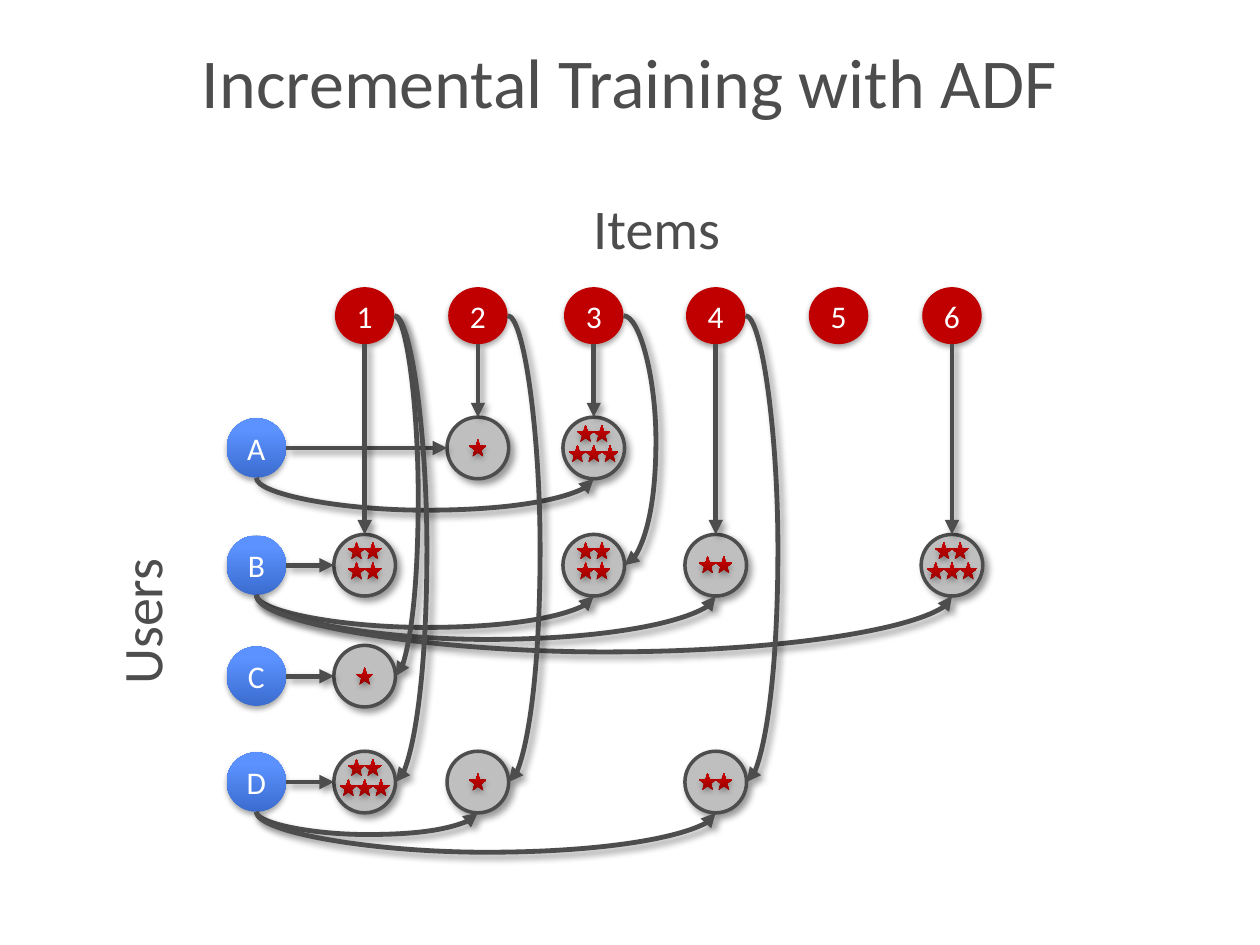
from copy import deepcopy

from lxml import etree
from pptx import Presentation
from pptx.dml.color import RGBColor
from pptx.enum.shapes import MSO_CONNECTOR, MSO_SHAPE
from pptx.enum.text import MSO_ANCHOR, MSO_AUTO_SIZE, PP_ALIGN
from pptx.oxml.ns import qn
from pptx.util import Pt

OVAL, STAR = MSO_SHAPE.OVAL, MSO_SHAPE.STAR_5_POINT
STRAIGHT, CURVE = MSO_CONNECTOR.STRAIGHT, MSO_CONNECTOR.CURVE
CENTER, MIDDLE = PP_ALIGN.CENTER, MSO_ANCHOR.MIDDLE

TITLE = "Incremental Training with ADF"
# label: (text, left, top, width, height, rotation)
AXES = [("Users", 36.7, 331.9, 87.1, 46, 270), ("Items", 331.9, 107.3, 87.8, 46, 0)]
# label: centre across for items, centre down for users
ITEMS = {"1": 208.4, "2": 273.1, "3": 339.3, "4": 409, "5": 479.2, "6": 544}
USERS = {"A": 256, "B": 323, "C": 386.4, "D": 446.9}
# user, item, stars, bulge of the user's arrow, bulge of the item's arrow (0 is straight)
RATINGS = [
    ("A", "2", 1, 0, 0),
    ("A", "3", 5, 18.7, 0),
    ("B", "1", 4, 0, 0),
    ("B", "3", 4, 18.7, 18.7),
    ("B", "4", 2, 25.6, 0),
    ("B", "6", 5, 32.8, 0),
    ("C", "1", 1, 0, 13.7),
    ("D", "1", 5, 0, 18.7),
    ("D", "2", 1, 13.1, 18.7),
    ("D", "4", 2, 23.3, 18.7),
]
# stars in each row and the rows' offsets from the cell's centre
STAR_ROWS = {
    1: [(1, 0)],
    2: [(2, -0.3)],
    4: [(2, -8.3), (2, 3.2)],
    5: [(2, -8.3), (3, 3.2)],
}

FONT = "Calibri"
GRAY, WHITE, RED, SILVER = "4D4D4D", "FFFFFF", "C00000", "BFBFBF"
BLUE_STOPS = [(0, "3B6CCF"), (0.8, "5B92FF"), (1, "5D93FF")]
STAR_STOPS = [(0, "980000"), (0.8, "C60000"), (1, "C70000")]
# opacity %, blur, distance, direction in degrees
SOFT, SLANTED = (35, 3.15, 1.8, 90), (40, 4, 3, 45)

ITEM_Y, USER_X = 180.4, 146.5
NODE, ITEM_HEIGHT, CELL = 34, 32.6, 35.2
STAR_SIZE, STAR_PITCH = 10, 9.3
STEP = (CELL - NODE) / 2


def rgb(color):
    return RGBColor.from_string(color)


def add_shadow(shape, opacity, blur, distance, direction):
    sp_pr = shape._element.spPr
    for old in sp_pr.findall(qn("a:effectLst")):
        sp_pr.remove(old)
    effects = etree.SubElement(sp_pr, qn("a:effectLst"))
    outer = etree.SubElement(
        effects, qn("a:outerShdw"), blurRad=str(Pt(blur)), dist=str(Pt(distance)),
        dir=str(direction * 60000), rotWithShape="0")
    black = etree.SubElement(outer, qn("a:srgbClr"), val="000000")
    etree.SubElement(black, qn("a:alpha"), val=str(opacity * 1000))


def set_fill(shape, paint):
    """Fill with one colour, or with three gradient stops running upwards."""
    fill = shape.fill
    if isinstance(paint, str):
        fill.solid()
        fill.fore_color.rgb = rgb(paint)
        return
    fill.gradient()
    fill.gradient_angle = 90
    stop_list = shape._element.spPr.find(".//" + qn("a:gsLst"))
    stop_list.append(deepcopy(stop_list[0]))
    for stop, (position, color) in zip(fill.gradient_stops, paint):
        stop.position = position
        stop.color.rgb = rgb(color)


def add_centred(shapes, kind, x, y, width, height, paint, shadow):
    shape = shapes.add_shape(
        kind, Pt(x - width / 2), Pt(y - height / 2), Pt(width), Pt(height))
    shape.shadow.inherit = False
    set_fill(shape, paint)
    shape.line.fill.background()
    add_shadow(shape, *shadow)
    return shape


def write(paragraph, text, size, color):
    run = paragraph.add_run()
    run.text = text
    run.font.name, run.font.size = FONT, Pt(size)
    run.font.color.rgb = rgb(color)


def add_node(shapes, label, x, y, height, paint):
    frame = add_centred(shapes, OVAL, x, y, NODE, height, paint, SOFT).text_frame
    frame.margin_left = frame.margin_right = frame.margin_top = frame.margin_bottom = 0
    frame.word_wrap = False
    frame.vertical_anchor = MIDDLE
    frame.paragraphs[0].alignment = CENTER
    write(frame.paragraphs[0], label, 18, WHITE)


def add_cell(shapes, x, y, stars):
    members = shapes.add_group_shape().shapes
    circle = add_centred(members, OVAL, x, y, CELL, CELL, SILVER, SLANTED)
    circle.line.color.rgb = rgb(GRAY)
    circle.line.width = Pt(2)
    for count, offset in STAR_ROWS[stars]:
        for i in range(count):
            star_x = x + (i - (count - 1) / 2) * STAR_PITCH
            add_centred(members, STAR, star_x, y + offset, STAR_SIZE, STAR_SIZE,
                        STAR_STOPS, SOFT)


def add_arrow(shapes, kind, x1, y1, x2, y2):
    arrow = shapes.add_connector(kind, Pt(x1), Pt(y1), Pt(x2), Pt(y2))
    arrow.line.color.rgb = rgb(GRAY)
    arrow.line.width = Pt(2.75)
    etree.SubElement(arrow.line._get_or_add_ln(), qn("a:tailEnd"), type="triangle")
    add_shadow(arrow, *SLANTED)
    return arrow


def add_bow(shapes, x, y, span, bulge):
    """Curve bulging right, from (x, y) down over the span."""
    bow = add_arrow(shapes, CURVE, x, y, x + STEP, y + span)
    guides = bow._element.spPr.find(qn("a:prstGeom")).get_or_add_avLst()
    etree.SubElement(guides, qn("a:gd"), name="adj1",
                     fmla=f"val {round(bulge / STEP * 100000)}")
    return bow


def add_hanging_bow(shapes, x, y, span, bulge):
    """Curve bulging down, from (x, y) rightwards over the span."""
    left = x + span / 2 - STEP / 2
    top = y + STEP / 2 - span / 2
    frame = add_bow(shapes, left, top, span, bulge)._element.spPr.find(qn("a:xfrm"))
    frame.set("rot", str(270 * 60000))
    frame.set("flipH", "1")


def main():
    deck = Presentation()
    deck.slide_width, deck.slide_height = Pt(720), Pt(540)
    slide = deck.slides.add_slide(deck.slide_layouts[5])
    shapes = slide.shapes

    title = shapes.title
    title.left, title.top, title.width, title.height = Pt(41.8), Pt(26), Pt(635.8), Pt(40.3)
    title.text_frame.vertical_anchor = MIDDLE
    title.text_frame.paragraphs[0].alignment = CENTER
    write(title.text_frame.paragraphs[0], TITLE, 40, GRAY)

    for item, x in ITEMS.items():
        add_node(shapes, item, x, ITEM_Y, ITEM_HEIGHT, RED)
    for user, y in USERS.items():
        add_node(shapes, user, USER_X, y, NODE, BLUE_STOPS)

    for text, left, top, width, height, rotation in AXES:
        box = shapes.add_textbox(Pt(left), Pt(top), Pt(width), Pt(height))
        box.rotation = rotation
        box.text_frame.word_wrap = False
        box.text_frame.auto_size = MSO_AUTO_SIZE.SHAPE_TO_FIT_TEXT
        write(box.text_frame.paragraphs[0], text, 32, GRAY)

    for user, item, stars, _, _ in RATINGS:
        add_cell(shapes, ITEMS[item], USERS[user], stars)

    for user, item, _, user_bulge, item_bulge in RATINGS:
        x, y = ITEMS[item], USERS[user]
        if user_bulge:
            add_hanging_bow(shapes, USER_X, y + NODE / 2, x - USER_X, user_bulge)
        else:
            add_arrow(shapes, STRAIGHT, USER_X + NODE / 2, y, x - CELL / 2, y)
        if item_bulge:
            add_bow(shapes, x + NODE / 2, ITEM_Y, y - ITEM_Y, item_bulge)
        else:
            add_arrow(shapes, STRAIGHT, x, ITEM_Y + ITEM_HEIGHT / 2, x, y - CELL / 2)

    deck.save("out.pptx")


if __name__ == "__main__":
    main()
